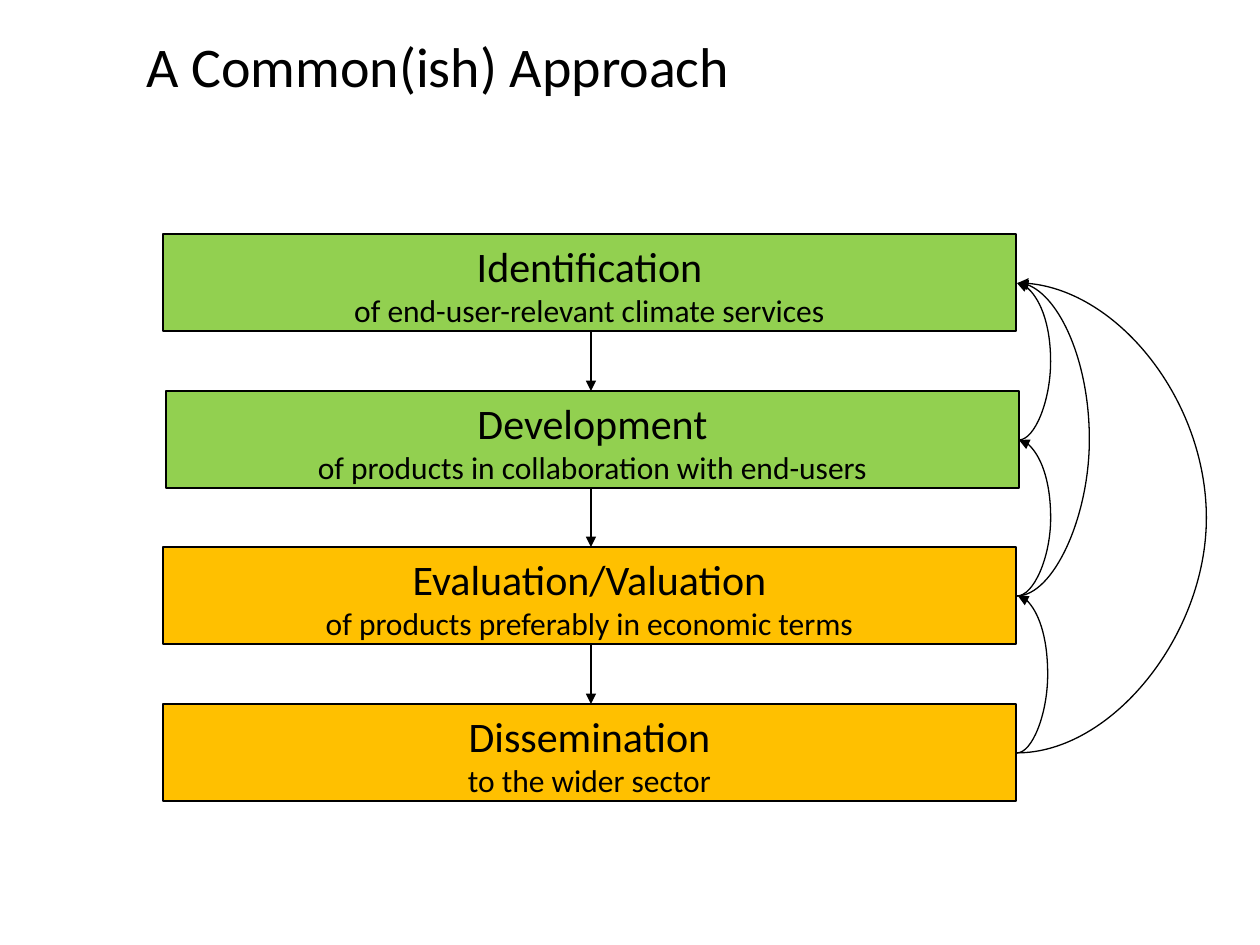
from itertools import pairwise
from typing import NamedTuple

from lxml import etree
from pptx import Presentation
from pptx import util as u
from pptx.dml.color import RGBColor
from pptx.enum import shapes, text
from pptx.oxml.ns import qn

PX = u.Inches(1) // 126
BLACK, GREEN, AMBER = "000000", "92D050", "FFC000"
FONT = "Calibri"
STEP_WIDTH, STEP_HEIGHT = 853, 97
ARROW_X = 591


class Step(NamedTuple):
    left: int
    top: int
    fill: str
    heading: str
    detail: str

    @property
    def middle(self) -> int:
        return self.top + STEP_HEIGHT // 2 + 1


class Feedback(NamedTuple):
    """A curve from one step back to an earlier one, by step index."""
    source: int
    target: int
    start_x: int
    end_x: int
    bulge_x: int


STEPS = [
    Step(163, 234, GREEN, "Identification", "of end-user-relevant climate services"),
    Step(166, 391, GREEN, "Development", "of products in collaboration with end-users"),
    Step(163, 547, AMBER, "Evaluation/Valuation", "of products preferably in economic terms"),
    Step(163, 704, AMBER, "Dissemination", "to the wider sector"),
]
FEEDBACKS = [
    Feedback(1, 0, 1019, 1017, 1051),
    Feedback(2, 0, 1017, 1018, 1090),
    Feedback(3, 0, 1017, 1018, 1208),
    Feedback(2, 1, 1017, 1019, 1051),
    Feedback(3, 2, 1017, 1018, 1048),
]


def rgb(colour: str) -> RGBColor:
    return RGBColor.from_string(colour)


def add_run(paragraph, words: str, size: int) -> None:
    run = paragraph.add_run()
    run.text = words
    for name, value in {"name": FONT, "size": u.Pt(size)}.items():
        setattr(run.font, name, value)
    run.font.color.rgb = rgb(BLACK)


def add_title(slide, words: str) -> None:
    box = slide.shapes.add_textbox(134 * PX, 6 * PX, 1111 * PX, 118 * PX)
    frame = box.text_frame
    settings = {"word_wrap": True, "vertical_anchor": text.MSO_ANCHOR.MIDDLE}
    for name, value in settings.items():
        setattr(frame, name, value)
    add_run(frame.paragraphs[0], words, 32)


def style_line(line) -> None:
    line.color.rgb = rgb(BLACK)
    line.width = u.Pt(0.75)


def add_step(slide, step: Step) -> None:
    shape = slide.shapes.add_shape(
        shapes.MSO_SHAPE.RECTANGLE,
        step.left * PX, step.top * PX, STEP_WIDTH * PX, STEP_HEIGHT * PX)
    shape.shadow.inherit = False
    shape.fill.solid()
    shape.fill.fore_color.rgb = rgb(step.fill)
    style_line(shape.line)
    shape.text_frame.word_wrap = True
    shape.text_frame.vertical_anchor = text.MSO_ANCHOR.TOP
    paragraph = shape.text_frame.paragraphs[0]
    paragraph.alignment = text.PP_ALIGN.CENTER
    add_run(paragraph, step.heading, 24)
    paragraph.add_line_break()
    add_run(paragraph, step.detail, 18)


def add_arrow(slide, kind, start: tuple[int, int], end: tuple[int, int]):
    connector = slide.shapes.add_connector(
        kind, *(value * PX for value in (*start, *end)))
    style_line(connector.line)
    properties = connector._element.spPr
    line = properties.find(qn("a:ln"))
    etree.SubElement(line, qn("a:tailEnd"), type="triangle")
    etree.SubElement(properties, qn("a:effectLst"))
    return connector


def add_feedback(slide, feedback: Feedback) -> None:
    connector = add_arrow(
        slide, shapes.MSO_CONNECTOR.CURVE,
        (feedback.start_x, STEPS[feedback.source].middle),
        (feedback.end_x, STEPS[feedback.target].middle))
    reach = feedback.bulge_x - feedback.start_x
    adjustment = round(100000 * reach / (feedback.end_x - feedback.start_x))
    geometry = connector._element.spPr.find(qn("a:prstGeom"))
    guides = geometry.find(qn("a:avLst"))
    if guides is None:
        guides = etree.SubElement(geometry, qn("a:avLst"))
    etree.SubElement(guides, qn("a:gd"), name="adj1", fmla=f"val {adjustment}")


def main() -> None:
    presentation = Presentation()
    presentation.slide_width = u.Inches(10)
    presentation.slide_height = u.Inches(7.5)
    slide = presentation.slides.add_slide(presentation.slide_layouts[6])
    add_title(slide, "A Common(ish) Approach")
    for step in STEPS:
        add_step(slide, step)
    for upper, lower in pairwise(STEPS):
        add_arrow(slide, shapes.MSO_CONNECTOR.STRAIGHT,
                  (ARROW_X, upper.top + STEP_HEIGHT), (ARROW_X, lower.top))
    for feedback in FEEDBACKS:
        add_feedback(slide, feedback)
    presentation.save("out.pptx")


if __name__ == "__main__":
    main()
